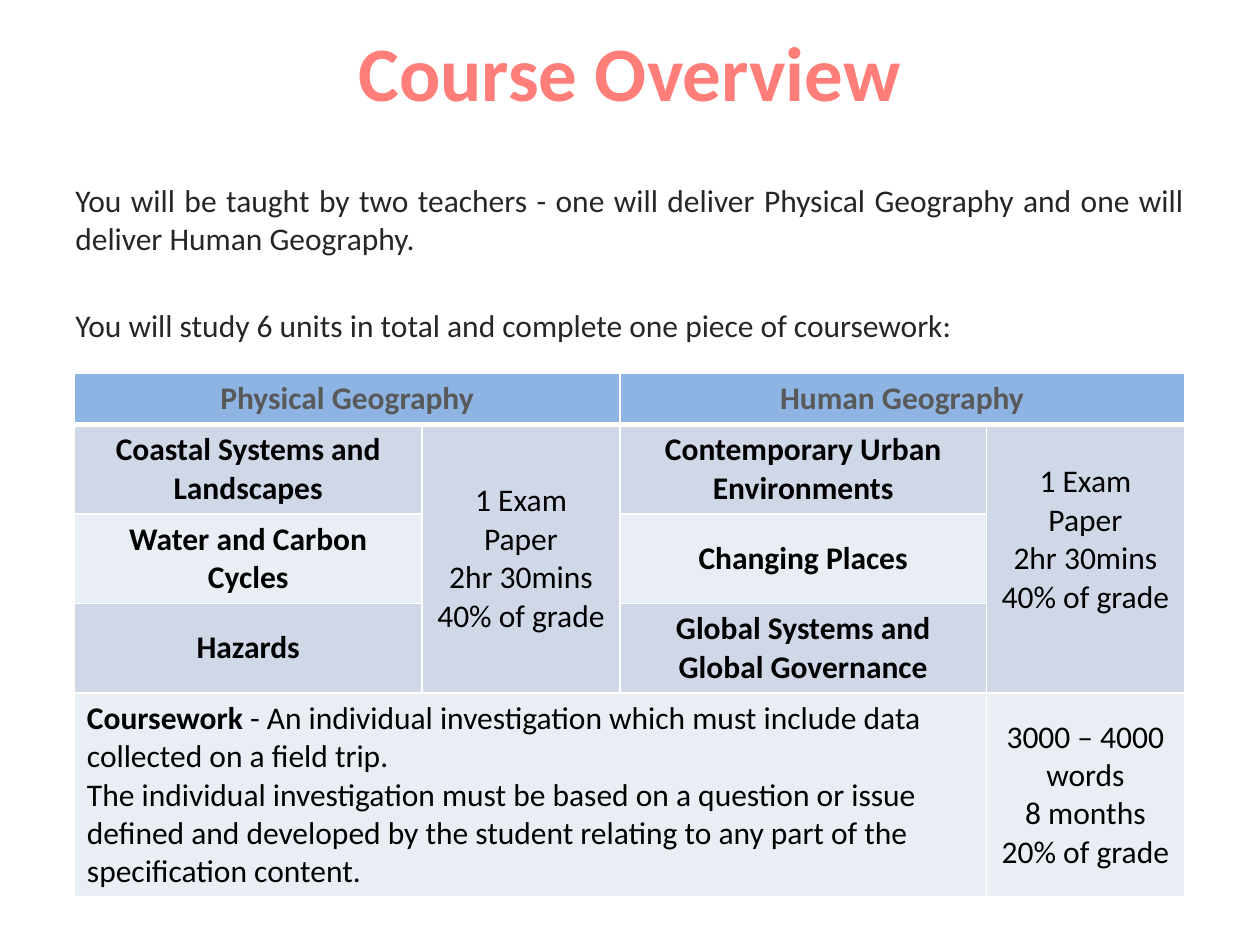
from dataclasses import dataclass

from lxml import etree
from pptx import Presentation
from pptx.dml.color import RGBColor
from pptx.enum import text
from pptx.oxml import ns
from pptx.util import Inches, Pt

COLORS = {
    "title": "FF7E79", "body": "262626", "heading": "595959", "cell": "000000",
    "header": "8EB4E3", "band_dark": "D0D8E8", "band_light": "E9EDF4", "border": "FFFFFF",
}
CENTER, LEFT, JUSTIFY = text.PP_ALIGN.CENTER, text.PP_ALIGN.LEFT, text.PP_ALIGN.JUSTIFY
TOP, MIDDLE = text.MSO_ANCHOR.TOP, text.MSO_ANCHOR.MIDDLE

COLUMN_WIDTHS = [2.76, 1.57, 2.91, 1.57]
ROW_HEIGHTS = [0.41, 0.71, 0.71, 0.71, 1.62]
ROW_FILLS = ["header", "band_dark", "band_light", "band_dark", "band_light"]
EXAM = "1 Exam Paper\n2hr 30mins\n40% of grade"


@dataclass
class Entry:
    row: int
    col: int
    text: str
    bold: bool = False
    rows: int = 1
    cols: int = 1
    color: str = "cell"
    align: text.PP_ALIGN = CENTER
    anchor: text.MSO_ANCHOR = MIDDLE
    lead: str = ""
    bottom: float = 0.05


ENTRIES = [
    Entry(0, 0, "Physical Geography", True, cols=2, color="heading", anchor=TOP),
    Entry(0, 2, "Human Geography", True, cols=2, color="heading", anchor=TOP),
    Entry(1, 0, "Coastal Systems and Landscapes", True),
    Entry(2, 0, "Water and Carbon Cycles", True),
    Entry(3, 0, "Hazards", True),
    Entry(1, 1, EXAM, rows=3),
    Entry(1, 2, "Contemporary Urban Environments", True),
    Entry(2, 2, "Changing Places", True),
    Entry(3, 2, "Global Systems and Global Governance", True),
    Entry(1, 3, EXAM, rows=3, bottom=0.35),
    Entry(4, 0, " - An individual investigation which must include data collected on a field trip.\n"
          "The individual investigation must be based on a question or issue defined and "
          "developed by the student relating to any part of the specification content.",
          cols=3, align=LEFT, anchor=TOP, lead="Coursework"),
    Entry(4, 3, "3000 – 4000 words\n8 months\n20% of grade"),
]


def rgb(name: str) -> RGBColor:
    return RGBColor.from_string(COLORS[name])


def write(tf, content: str, size: float, color: str, align, bold=False, lead="") -> None:
    """Fill a text frame; lead is a bold opening of the first paragraph."""
    tf.word_wrap = True
    tf.text = lead or content
    if lead:
        first, *rest = content.split("\n")
        tf.paragraphs[0].add_run().text = first
        for line in rest:
            tf.add_paragraph().text = line
    for p in tf.paragraphs:
        p.alignment = align
        for r in p.runs:
            r.font.name, r.font.size = "Calibri", Pt(size)
            r.font.bold = bold
            r.font.color.rgb = rgb(color)
    if lead:
        tf.paragraphs[0].runs[0].font.bold = True


def add_text(s, top: float, height: float, content: str, size: float, color: str,
             align, anchor=TOP, bold=False):
    tf = s.shapes.add_textbox(Inches(0.5), Inches(top), Inches(9), Inches(height)).text_frame
    write(tf, content, size, color, align, bold)
    tf.vertical_anchor = anchor
    return tf


def add_borders(cell, bottom: float, top: float) -> None:
    tc_pr = cell._tc.get_or_add_tcPr()
    for side, width in (("L", 1), ("R", 1), ("T", top), ("B", bottom)):
        ln = etree.SubElement(tc_pr, ns.qn(f"a:ln{side}"), w=str(Pt(width)))
        fill = etree.SubElement(ln, ns.qn("a:solidFill"))
        etree.SubElement(fill, ns.qn("a:srgbClr"), val=COLORS["border"])


def add_course_table(s) -> None:
    table = s.shapes.add_table(
        len(ROW_HEIGHTS), len(COLUMN_WIDTHS), Inches(0.59), Inches(2.96),
        Inches(sum(COLUMN_WIDTHS)), Inches(sum(ROW_HEIGHTS))).table
    table.first_row = table.horz_banding = False
    for column, width in zip(table.columns, COLUMN_WIDTHS):
        column.width = Inches(width)
    for i, (row, height) in enumerate(zip(table.rows, ROW_HEIGHTS)):
        row.height = Inches(height)
        for cell in row.cells:
            add_borders(cell, bottom=3 if i == 0 else 1, top=3 if i == 1 else 1)
            cell.fill.solid()
            cell.fill.fore_color.rgb = rgb(ROW_FILLS[i])
    for e in ENTRIES:
        cell = table.cell(e.row, e.col)
        if e.rows * e.cols > 1:
            cell.merge(table.cell(e.row + e.rows - 1, e.col + e.cols - 1))
        write(cell.text_frame, e.text, 18, e.color, e.align, e.bold, e.lead)
        cell.vertical_anchor = e.anchor
        cell.margin_bottom = Inches(e.bottom)


def main() -> None:
    prs = Presentation()
    prs.slide_width, prs.slide_height = Inches(10), Inches(7.5)
    s = prs.slides.add_slide(prs.slide_layouts[6])
    add_text(s, 0.21, 0.71, "Course Overview", 44, "title", CENTER, MIDDLE, True)
    intro = add_text(
        s, 1.39, 1.45,
        "You will be taught by two teachers - one will deliver Physical Geography "
        "and one will deliver Human Geography.\n"
        "You will study 6 units in total and complete one piece of coursework:",
        18, "body", JUSTIFY)
    intro.paragraphs[1].space_before = Pt(28)
    add_course_table(s)
    prs.save("out.pptx")


if __name__ == "__main__":
    main()
